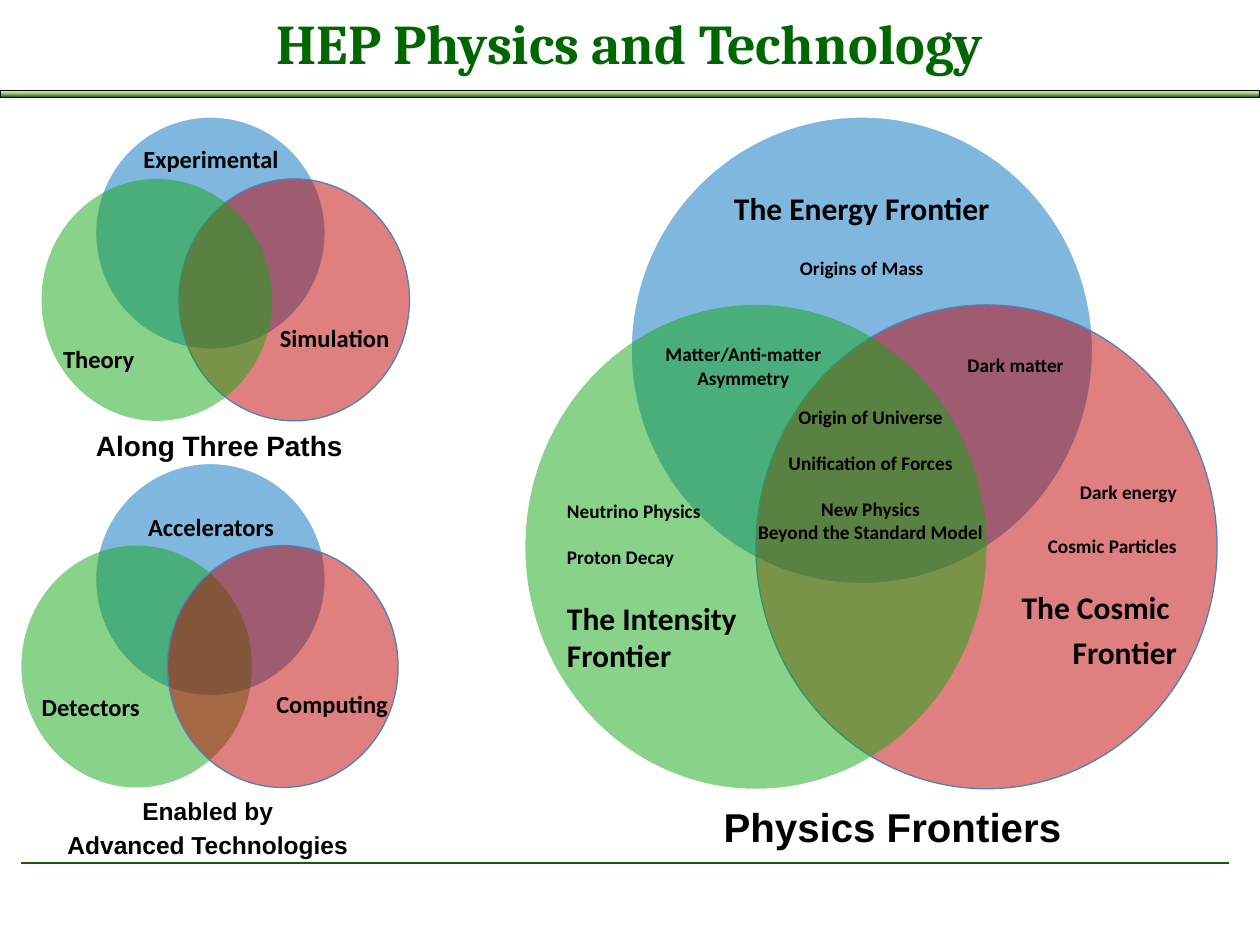
from copy import deepcopy

from pptx import Presentation
from pptx.dml.color import RGBColor
from pptx.enum.shapes import MSO_CONNECTOR, MSO_SHAPE
from pptx.enum.text import MSO_ANCHOR, PP_ALIGN
from pptx.oxml.ns import qn
from pptx.oxml.xmlchemy import OxmlElement
from pptx.util import Inches, Pt

LEFT, CENTER, RIGHT = PP_ALIGN.LEFT, PP_ALIGN.CENTER, PP_ALIGN.RIGHT
TOP, MIDDLE = MSO_ANCHOR.TOP, MSO_ANCHOR.MIDDLE
OVAL, RECTANGLE = MSO_SHAPE.OVAL, MSO_SHAPE.RECTANGLE
STRAIGHT = MSO_CONNECTOR.STRAIGHT

WIDTH, HEIGHT = 10, 7.5
BODY, CAPTION, HEADING = "Calibri", "Arial", "Cambria"
LINE_HEIGHT = {BODY: 1.22, CAPTION: 1.15, HEADING: 1.17}

# Circle kind: fill, line colour, line width, width and height at scale 1
CIRCLES = {
    "blue": ("0070C0", "FFFFFF", 2, 1.84, 1.86),
    "red": ("C00000", "4F81BD", 0, 1.83, 1.92),
    "green": ("15A715", None, 0, 1.83, 1.92),
}

# Venn diagram: scale, then (circle kind, left, top) from back to front
VENNS = [
    (1, [("blue", 0.75, 3.67), ("green", 0.17, 4.33), ("red", 1.33, 4.33)]),
    (2, [("blue", 5, 0.92), ("red", 6, 2.42), ("green", 4.17, 2.42)]),
    (1, [("blue", 0.75, 0.92), ("red", 1.42, 1.42), ("green", 0.33, 1.42)]),
]

# Label: left, top, width, alignment, font, lines of (text, size, space before)
LABELS = [
    (5.49, 1.5, 2.7, CENTER, BODY,
     [("The Energy Frontier", 18, 0), ("Origins of Mass", 11, 17)]),
    (6.75, 3.81, 2.59, RIGHT, BODY,
     [("Dark energy", 11, 0), ("Cosmic Particles", 11, 18),
      ("The Cosmic ", 18, 17.5), ("Frontier", 18, 4)]),
    (4.5, 3.96, 2.16, LEFT, BODY,
     [("Neutrino Physics", 11, 0), ("Proton Decay", 11, 13.5),
      ("The Intensity", 18, 17), ("Frontier", 18, 0)]),
    (7.57, 2.8, 0.98, CENTER, BODY, [("Dark matter", 11, 0)]),
    (5.16, 2.72, 1.48, CENTER, BODY,
     [("Matter/Anti-matter", 11, 0), ("Asymmetry", 11, 0)]),
    (5.91, 3.22, 2, CENTER, BODY,
     [("Origin of Universe", 11, 0), ("Unification of Forces", 11, 13),
      ("New Physics", 11, 13), ("Beyond the Standard Model", 11, 0)]),
    (1, 1.14, 1.35, CENTER, BODY, [("Experimental", 14, 0)]),
    (0.5, 2.73, 1.08, LEFT, BODY, [("Theory", 14, 0)]),
    (1.79, 2.56, 1.3, RIGHT, BODY, [("Simulation", 14, 0)]),
    (1, 4.06, 1.35, CENTER, BODY, [("Accelerators", 14, 0)]),
    (0.33, 5.49, 1.08, LEFT, BODY, [("Detectors", 14, 0)]),
    (1.71, 5.47, 1.37, RIGHT, BODY, [("Computing", 14, 0)]),
    (5.42, 6.37, 3.33, CENTER, CAPTION, [("Physics Frontiers", 23, 0)]),
    (0.65, 3.4, 2.18, CENTER, CAPTION, [("Along Three Paths", 16, 0)]),
    (0.15, 6.32, 3, CENTER, CAPTION,
     [("Enabled by", 14, 0), ("Advanced Technologies", 14, 2.5)]),
]

BAR_STOPS = [(0, "DDEBCF"), (0.5, "9CB86E"), (1, "156B13")]


def color(value):
    return RGBColor.from_string(value)


def add_circle(slide, kind, left, top, scale):
    fill, line, line_width, width, height = CIRCLES[kind]
    shape = slide.shapes.add_shape(OVAL, Inches(left), Inches(top),
                                   Inches(width * scale), Inches(height * scale))
    shape.shadow.inherit = False
    shape.fill.solid()
    shape.fill.fore_color.rgb = color(fill)
    alpha = OxmlElement("a:alpha")
    alpha.set("val", "50000")
    shape._element.spPr.find(qn("a:solidFill"))[0].append(alpha)
    if line:
        shape.line.color.rgb = color(line)
        shape.line.width = Pt(line_width)
    else:
        shape.line.fill.background()


def add_label(slide, left, top, width, alignment, font, lines,
              text_color="000000", height=None, anchor=TOP):
    """Add bold lines in a box without margins, as tall as they need by default."""
    if height is None:
        height = sum(size * LINE_HEIGHT[font] + gap for _, size, gap in lines) / 72
    box = slide.shapes.add_textbox(Inches(left), Inches(top),
                                   Inches(width), Inches(height))
    frame = box.text_frame
    frame.word_wrap = True
    frame.vertical_anchor = anchor
    frame.margin_left = frame.margin_right = 0
    frame.margin_top = frame.margin_bottom = 0
    for index, (text, size, gap) in enumerate(lines):
        paragraph = frame.add_paragraph() if index else frame.paragraphs[0]
        paragraph.alignment = alignment
        if gap:
            paragraph.space_before = Pt(gap)
        run = paragraph.add_run()
        run.text = text
        run.font.name = font
        run.font.size = Pt(size)
        run.font.bold = True
        run.font.color.rgb = color(text_color)


def add_title_bar(slide):
    bar = slide.shapes.add_shape(RECTANGLE, 0, Inches(0.72),
                                 Inches(WIDTH), Inches(0.05))
    bar.shadow.inherit = False
    bar.line.color.rgb = color("000000")
    bar.line.width = Pt(0.5)
    bar.fill.gradient()
    bar.fill.gradient_angle = 270
    stop_list = bar._element.spPr.find(qn("a:gradFill")).find(qn("a:gsLst"))
    stop_list.append(deepcopy(stop_list[-1]))
    for stop, (position, value) in zip(bar.fill.gradient_stops, BAR_STOPS):
        stop.position = position
        stop.color.rgb = color(value)


def add_footer_line(slide):
    line = slide.shapes.add_connector(STRAIGHT, Inches(0.17), Inches(6.85),
                                      Inches(9.75), Inches(6.85))
    line.line.color.rgb = color("135C00")
    line.line.width = Pt(1.25)
    line._element.spPr.append(OxmlElement("a:effectLst"))


def main():
    presentation = Presentation()
    presentation.slide_width = Inches(WIDTH)
    presentation.slide_height = Inches(HEIGHT)
    slide = presentation.slides.add_slide(presentation.slide_layouts[6])
    for scale, circles in VENNS:
        for kind, left, top in circles:
            add_circle(slide, kind, left, top, scale)
    add_label(slide, 0, 0, WIDTH, CENTER, HEADING,
              [("HEP Physics and Technology", 32, 0)],
              text_color="006600", height=0.67, anchor=MIDDLE)
    for label in LABELS:
        add_label(slide, *label)
    add_title_bar(slide)
    add_footer_line(slide)
    presentation.save("out.pptx")


if __name__ == "__main__":
    main()
